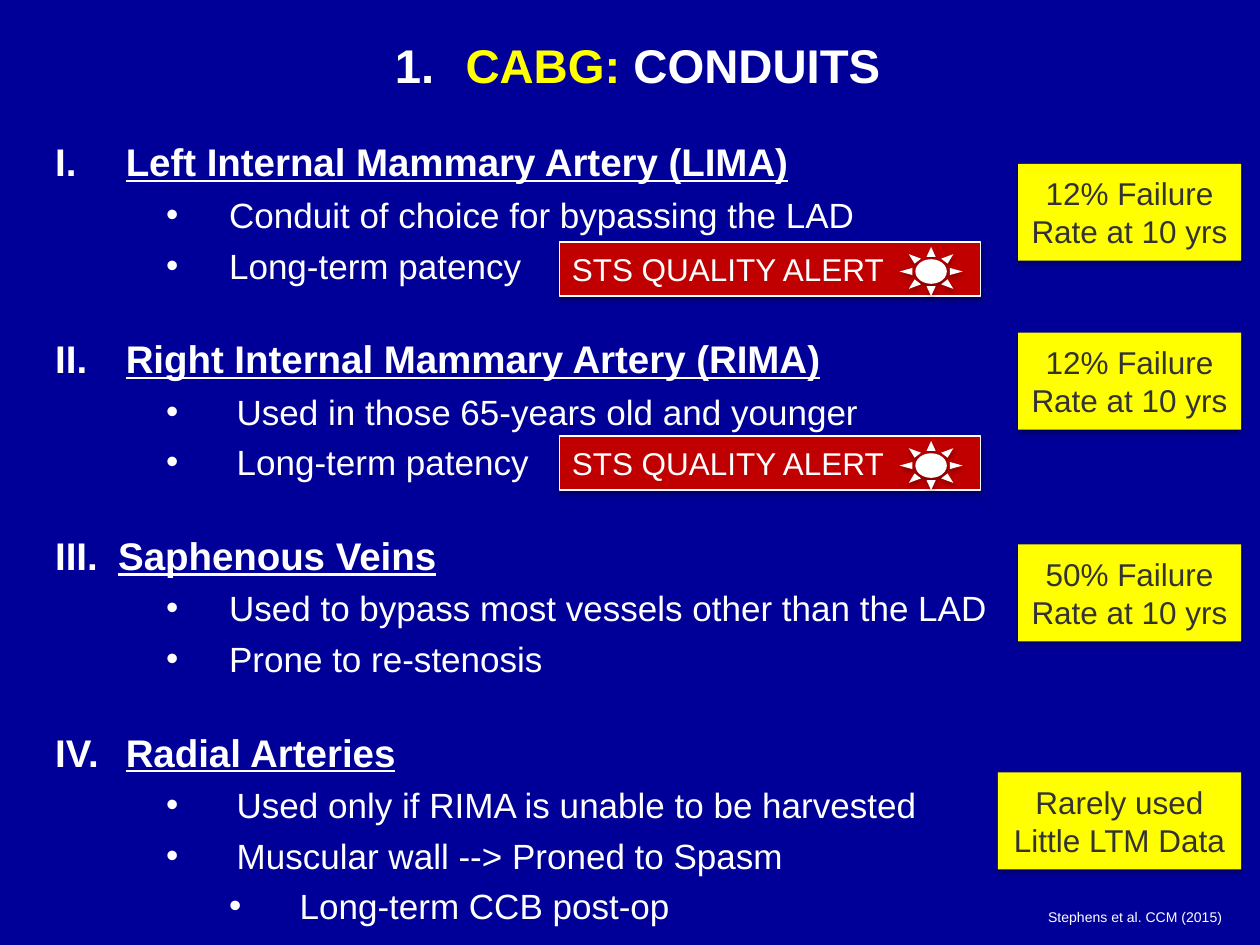
import pptx
import pptx.util
import pptx.dml.color
import pptx.enum.shapes
import pptx.enum.text
import lxml.etree

Inches, Pt = pptx.util.Inches, pptx.util.Pt
SHAPE = pptx.enum.shapes.MSO_SHAPE
ALIGN = pptx.enum.text.PP_ALIGN
ANCHOR = pptx.enum.text.MSO_ANCHOR
NS = "{http://schemas.openxmlformats.org/drawingml/2006/main}"
NAVY, WHITE, YELLOW, RED, GRAY = "000099", "FFFFFF", "FFFF00", "C00000", "333333"

PARTS = [
    ("Left Internal Mammary Artery (LIMA)", 0.62, -0.56, 1.44, -0.5,
     ["Conduit of choice for bypassing the LAD", "Long-term patency"], []),
    ("Right Internal Mammary Artery (RIMA)", 0.62, -0.56, 1.5, -0.56,
     ["Used in those 65-years old and younger", "Long-term patency"], []),
    ("Saphenous Veins", 0.56, -0.5, 1.44, -0.5,
     ["Used to bypass most vessels other than the LAD", "Prone to re-stenosis"], []),
    ("Radial Arteries", 0.62, -0.56, 1.5, -0.56,
     ["Used only if RIMA is unable to be harvested",
      "Muscular wall --> Proned to Spasm"], ["Long-term CCB post-op"]),
]
RATES = [
    (8.08, 1.3, 1.77, "12% Failure Rate at 10 yrs"),
    (8.08, 2.64, 1.77, "12% Failure Rate at 10 yrs"),
    (8.08, 4.32, 1.77, "50% Failure Rate at 10 yrs"),
    (7.92, 6.13, 1.93, "Rarely used\nLittle LTM Data"),
]


def color(code):
    """Turn a hex string into a colour."""
    return pptx.dml.color.RGBColor.from_string(code)


def style(run, size, code, bold=False, under=False):
    """Set the look of one run."""
    font = run.font
    font.name, font.size, font.bold = "Arial", Pt(size), bold
    font.underline = under
    font.color.rgb = color(code)


def mark(para, left, hang, start=None, scheme="romanUcPeriod"):
    """Give a paragraph a hanging number or a bullet."""
    props = para._p.get_or_add_pPr()
    props.set("marL", str(Inches(left)))
    props.set("indent", str(Inches(hang)))
    tint = lxml.etree.SubElement(props, NS + "buClr")
    lxml.etree.SubElement(tint, NS + "srgbClr", val=WHITE)
    lxml.etree.SubElement(props, NS + "buFont", typeface="Arial")
    if start:
        lxml.etree.SubElement(props, NS + "buAutoNum", type=scheme, startAt=str(start))
    else:
        lxml.etree.SubElement(props, NS + "buChar", char="•")


def add_text(slide, left, top, width, height):
    """Add a wrapped text box and return its frame."""
    box = slide.shapes.add_textbox(Inches(left), Inches(top), Inches(width), Inches(height))
    box.text_frame.word_wrap = True
    return box.text_frame


def add_title(slide, left, top, width, height):
    """Place the numbered two-colour title."""
    frame = add_text(slide, left, top, width, height)
    frame.vertical_anchor = ANCHOR.BOTTOM
    para = frame.paragraphs[0]
    mark(para, 0.56, -0.56, 1, "arabicPeriod")
    para.alignment = ALIGN.CENTER
    for text, code in (("CABG: ", YELLOW), ("CONDUITS", WHITE)):
        run = para.add_run()
        run.text = text
        style(run, 27, code, bold=True)


def add_body(slide, left, top, width, height):
    """Place the outline of conduits."""
    frame = add_text(slide, left, top, width, height)
    for num, (head, left, hang, inner, step, items, subs) in enumerate(PARTS, 1):
        para = frame.paragraphs[0] if num == 1 else frame.add_paragraph()
        para.text = head
        mark(para, left, hang, num)
        if num > 1:
            para.space_before = Pt(28)
        style(para.runs[0], 22, WHITE, bold=True, under=True)
        rows = [(text, 1, inner, step) for text in items]
        rows += [(text, 2, 2, -0.56) for text in subs]
        for text, level, indent, back in rows:
            para = frame.add_paragraph()
            para.text, para.level = text, level
            mark(para, indent, back)
            para.space_before = Pt(5)
            style(para.runs[0], 20, WHITE)


def add_block(slide, kind, left, top, width, height, fill, line=None):
    """Add a filled shape with a soft shadow below it."""
    shape = slide.shapes.add_shape(
        kind, Inches(left), Inches(top), Inches(width), Inches(height))
    shape.fill.solid()
    shape.fill.fore_color.rgb = color(fill)
    if line:
        shape.line.color.rgb = color(line)
        shape.line.width = Pt(0.75)
    else:
        shape.line.fill.background()
    shape.shadow.inherit = False
    glow = lxml.etree.SubElement(
        shape._element.spPr.find(NS + "effectLst"), NS + "outerShdw",
        blurRad=str(Pt(3.1)), dist=str(Pt(1.8)), dir="5400000", rotWithShape="0")
    tint = lxml.etree.SubElement(glow, NS + "srgbClr", val="000000")
    lxml.etree.SubElement(tint, NS + "alpha", val="35000")
    return shape


def add_label(shape, text, code, align):
    """Write 18-point text in the middle of a shape."""
    frame = shape.text_frame
    frame.word_wrap = True
    frame.vertical_anchor = ANCHOR.MIDDLE
    frame.text = text
    for para in frame.paragraphs:
        para.alignment = align
        style(para.runs[0], 18, code)


def add_rate(slide, left, top, width, height, text):
    """Place a yellow box with a failure rate."""
    shape = add_block(slide, SHAPE.RECTANGLE, left, top, width, height, YELLOW)
    add_label(shape, text, GRAY, ALIGN.CENTER)


def add_alert(slide, left, top, width, height):
    """Place a red alert bar with a sun at its right."""
    shape = add_block(slide, SHAPE.RECTANGLE, left, top, width, height, RED, WHITE)
    add_label(shape, "STS QUALITY ALERT", WHITE, ALIGN.LEFT)
    add_block(slide, SHAPE.SUN, left + width - 0.64, top + 0.04, 0.5, height - 0.04, WHITE)


def add_source(slide, left, top, width, height):
    """Place the citation."""
    frame = add_text(slide, left, top, width, height)
    frame.text = "Stephens et al. CCM (2015)"
    style(frame.paragraphs[0].runs[0], 8, WHITE)


def main():
    """Build the slide and save it."""
    deck = pptx.Presentation()
    deck.slide_width, deck.slide_height = Inches(10), Inches(7.5)
    slide = deck.slides.add_slide(deck.slide_layouts[6])
    slide.background.fill.solid()
    slide.background.fill.fore_color.rgb = color(NAVY)
    add_title(slide, 0.12, 0.18, 9.88, 0.61)
    add_body(slide, 0.28, 1.05, 9.47, 6.13)
    add_source(slide, 8.22, 7.16, 1.7, 0.24)
    for left, top, width, text in RATES:
        add_rate(slide, left, top, width, 0.77, text)
    for top in (1.92, 3.46):
        add_alert(slide, 4.44, top, 3.34, 0.43)
    deck.save("out.pptx")


if __name__ == "__main__":
    main()
